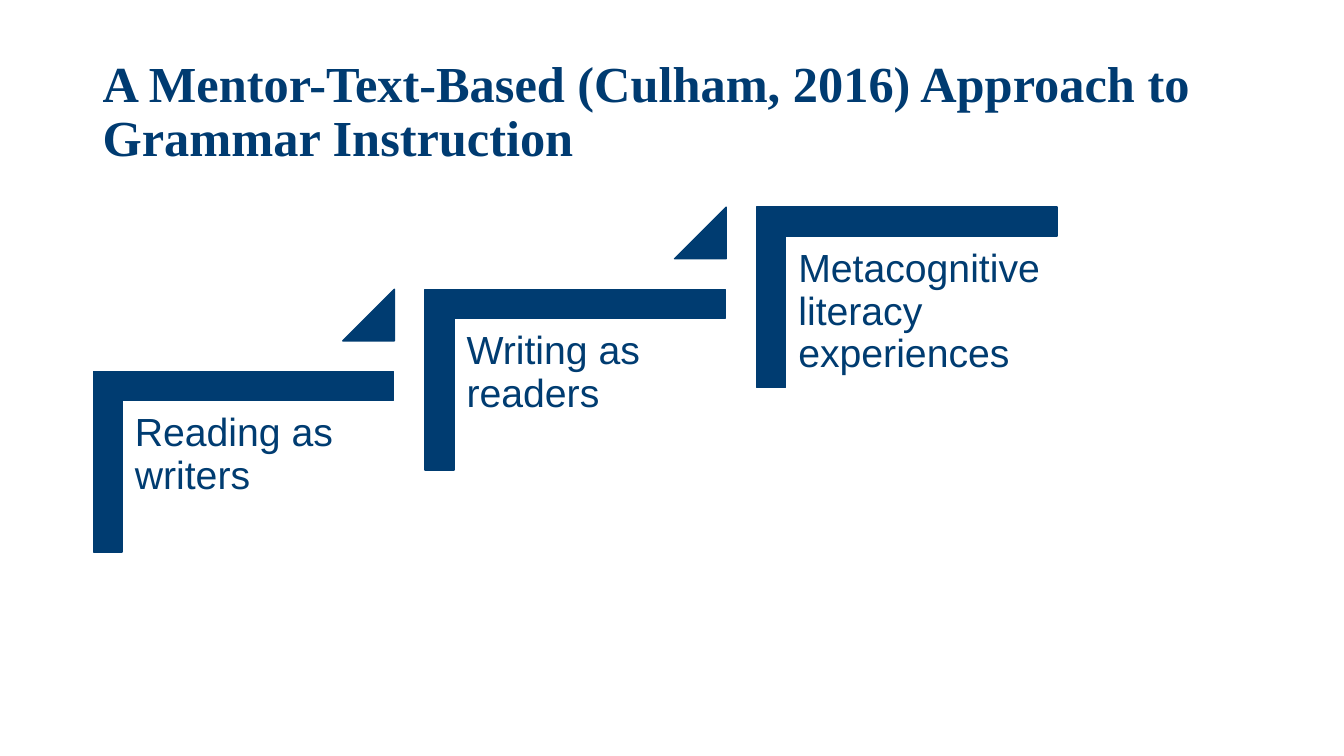
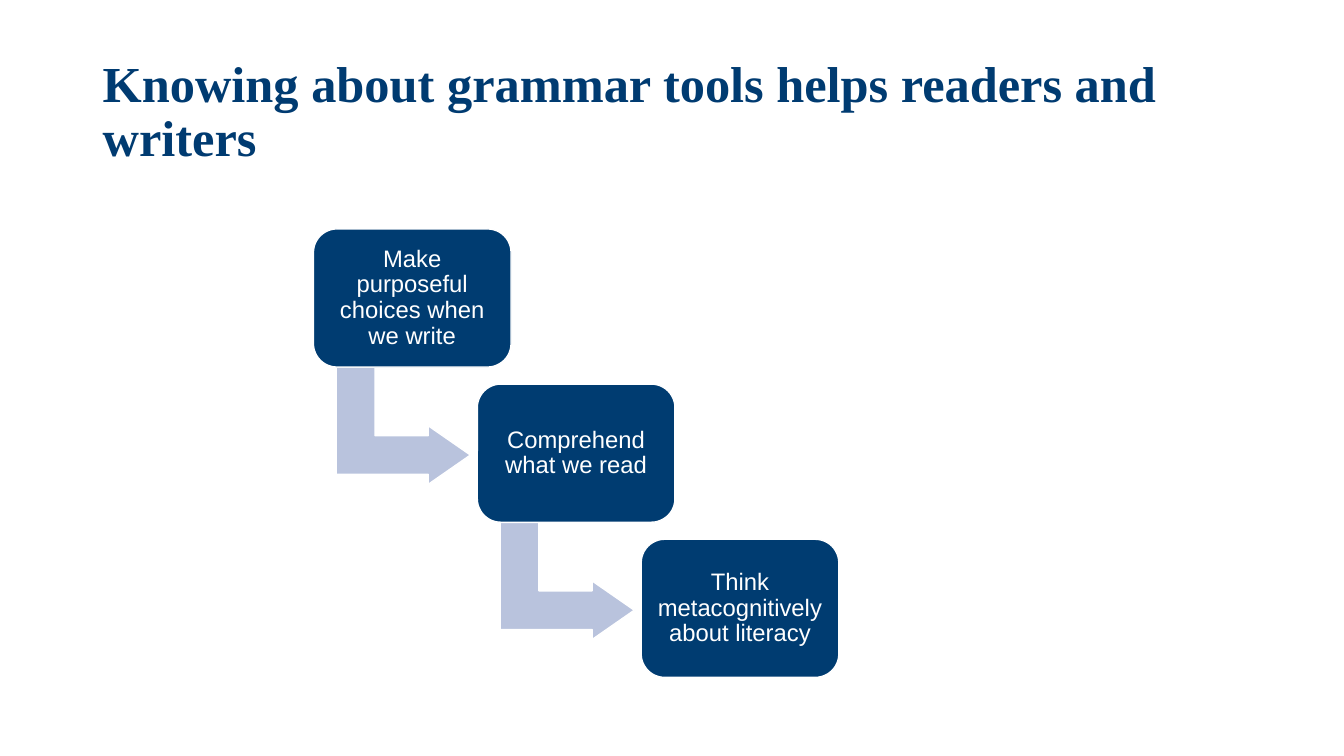
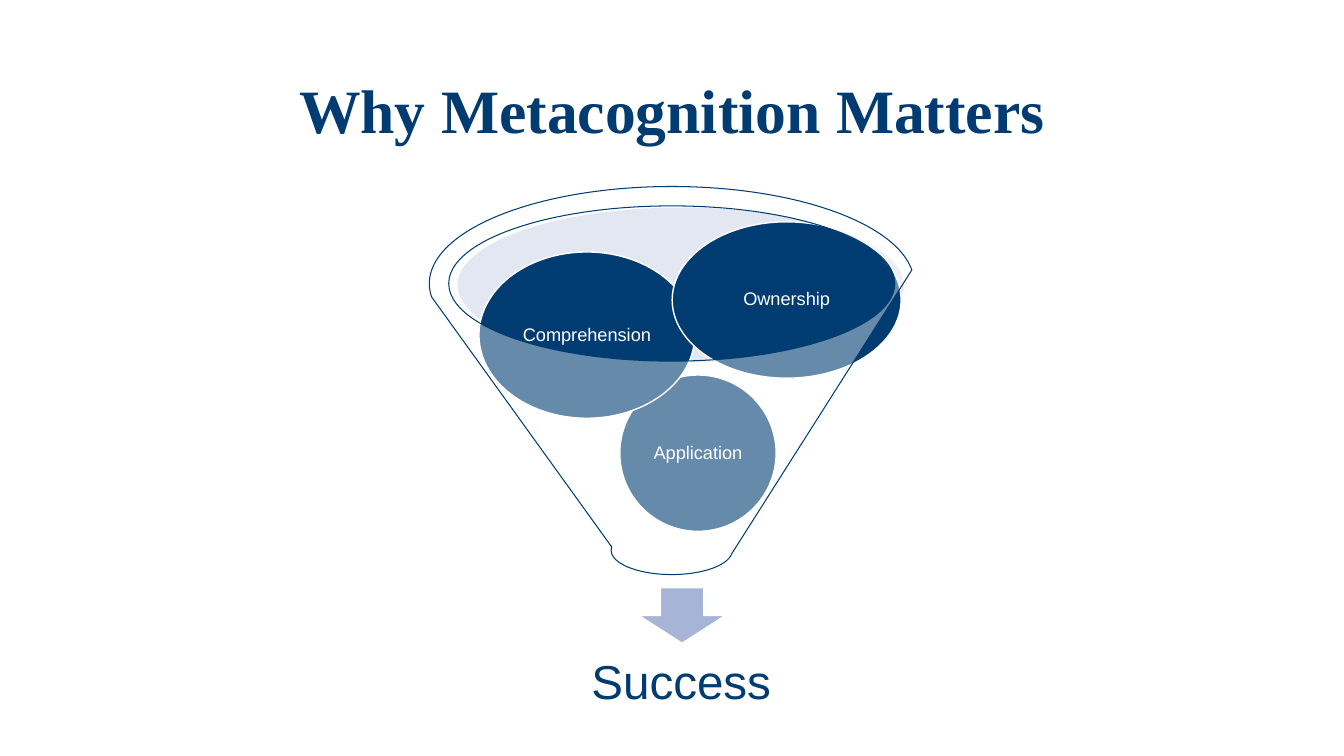
from dataclasses import dataclass

from lxml.etree import SubElement
from pptx import Presentation
from pptx.dml.color import RGBColor
from pptx.enum.shapes import MSO_SHAPE
from pptx.enum.text import MSO_ANCHOR, PP_ALIGN
from pptx.oxml.ns import qn
from pptx.util import Cm, Pt


@dataclass(frozen=True)
class Theme:
    title_color: str = "003B71"
    navy: str = "003C71"
    pale: str = "B9C3DD"
    mid: str = "A8B4D5"
    white: str = "FFFFFF"
    title_font: str = "Times New Roman"
    body_font: str = "Arial"
    title: int = 36
    big_title: int = 44
    result: int = 34
    step: int = 28
    box: int = 17
    ball: int = 13
    outline: float = 1
    thin: float = 0.75
    spacing: float = 0.9


T = Theme()


def write(tf, text, size, color, font=T.body_font, bold=False,
          align=PP_ALIGN.LEFT, anchor=MSO_ANCHOR.MIDDLE, inset=(0.17, 0.17)):
    """Fill a text frame; inset is (horizontal, vertical) in cm."""
    tf.word_wrap = True
    tf.vertical_anchor = anchor
    tf.margin_left = tf.margin_right = Cm(inset[0])
    tf.margin_top = tf.margin_bottom = Cm(inset[1])
    p = tf.paragraphs[0]
    p.alignment = align
    p.line_spacing = T.spacing
    r = p.add_run()
    r.text = text
    r.font.name, r.font.size, r.font.bold = font, Pt(size), bold
    r.font.color.rgb = RGBColor.from_string(color)


class Deck:
    def __init__(self):
        self.prs = Presentation()
        self.prs.slide_width, self.prs.slide_height = Cm(33.87), Cm(19.05)
        self.s = None

    def slide(self, title, size=T.title, align=PP_ALIGN.LEFT):
        self.s = self.prs.slides.add_slide(self.prs.slide_layouts[6])
        self.text(title, 2.34, 1.02, 29.21, 3.68, size=size, align=align,
                  color=T.title_color, font=T.title_font, bold=True,
                  inset=(0.25, 0.13))

    def text(self, text, x, y, w, h, **fmt):
        sp = self.s.shapes.add_textbox(Cm(x), Cm(y), Cm(w), Cm(h))
        write(sp.text_frame, text, **fmt)

    def shape(self, kind, x, y, w, h, fill=T.navy, line=T.white,
              width=T.outline, adj=(), rotation=0, opacity=None):
        sp = self.s.shapes.add_shape(kind, Cm(x), Cm(y), Cm(w), Cm(h))
        sp.shadow.inherit = False
        sp.rotation = rotation
        for i, value in enumerate(adj):
            sp.adjustments[i] = value
        sp.fill.solid()
        sp.fill.fore_color.rgb = RGBColor.from_string(fill)
        if opacity is not None:
            color = sp._element.spPr.find(qn("a:solidFill"))[0]
            SubElement(color, qn("a:alpha")).set("val", str(opacity * 1000))
        if line:
            sp.line.color.rgb = RGBColor.from_string(line)
            sp.line.width = Pt(width)
        else:
            sp.line.fill.background()
        return sp

    def label(self, kind, text, x, y, w, h, size, inset, adj=()):
        """Navy shape with centred white text."""
        sp = self.shape(kind, x, y, w, h, adj=adj)
        write(sp.text_frame, text, size, T.white, align=PP_ALIGN.CENTER,
              inset=(inset, inset))


def approach_slide(deck):
    deck.slide("A Mentor-Text-Based (Culham, 2016) Approach to Grammar Instruction")
    steps = ["Reading as writers", "Writing as readers",
             "Metacognitive literacy experiences"]
    for i, step in enumerate(steps):
        x, y = 3.86 + 8.36 * i, 7.85 - 2.07 * i
        deck.shape(MSO_SHAPE.CORNER, x, y, 4.55, 7.57, line=T.navy,
                   adj=(0.16, 0.16), rotation=90)
        deck.text(step, x - 0.76, y + 2.26, 6.83, 5.99, size=T.step,
                  color=T.navy, anchor=MSO_ANCHOR.TOP, inset=(0.3, 0.3))
        if i < len(steps) - 1:
            deck.shape(MSO_SHAPE.ISOSCELES_TRIANGLE, x + 4.78, y - 0.56,
                       1.3, 1.3, line=T.navy, adj=(1,))


def tools_slide(deck):
    deck.slide("Knowing about grammar tools helps readers and writers")
    boxes = ["Make purposeful choices when we write", "Comprehend what we read",
             "Think metacognitively about literacy"]
    for i, box in enumerate(boxes):
        x, y = 7.9 + 4.13 * i, 5.77 + 3.91 * i
        if i < len(boxes) - 1:
            deck.shape(MSO_SHAPE.BENT_UP_ARROW, x + 0.79, y + 3.27, 2.95, 3.38,
                       fill=T.pale, adj=(0.33, 0.25, 0.36), rotation=90)
        deck.label(MSO_SHAPE.ROUNDED_RECTANGLE, box, x, y, 4.98, 3.48,
                   T.box, 0.17, adj=(0.17,))


def metacognition_slide(deck):
    deck.slide("Why Metacognition Matters", T.big_title, PP_ALIGN.CENTER)
    deck.shape(MSO_SHAPE.OVAL, 11.53, 5.23, 11.25, 3.91, fill=T.pale,
               line=None, opacity=40)
    deck.shape(MSO_SHAPE.DOWN_ARROW, 16.1, 14.81, 2.18, 1.4, fill=T.mid)
    deck.text("Success", 11.94, 15.93, 10.46, 2.62, size=T.result,
              color=T.navy, align=PP_ALIGN.CENTER, inset=(0.66, 0.66))
    for text, x, y, w, h in [("Application", 15.62, 9.45, 3.94, 3.94),
                             ("Comprehension", 12.07, 6.35, 5.44, 4.19),
                             ("Ownership", 16.94, 5.59, 5.77, 3.94)]:
        deck.label(MSO_SHAPE.OVAL, text, x, y, w, h, T.ball, 0.05)
    deck.shape(MSO_SHAPE.FUNNEL, 10.82, 4.7, 12.22, 9.78, fill=T.white,
               line=T.navy, width=T.thin, opacity=40)


def main():
    deck = Deck()
    approach_slide(deck)
    tools_slide(deck)
    metacognition_slide(deck)
    deck.prs.save("out.pptx")


if __name__ == "__main__":
    main()
